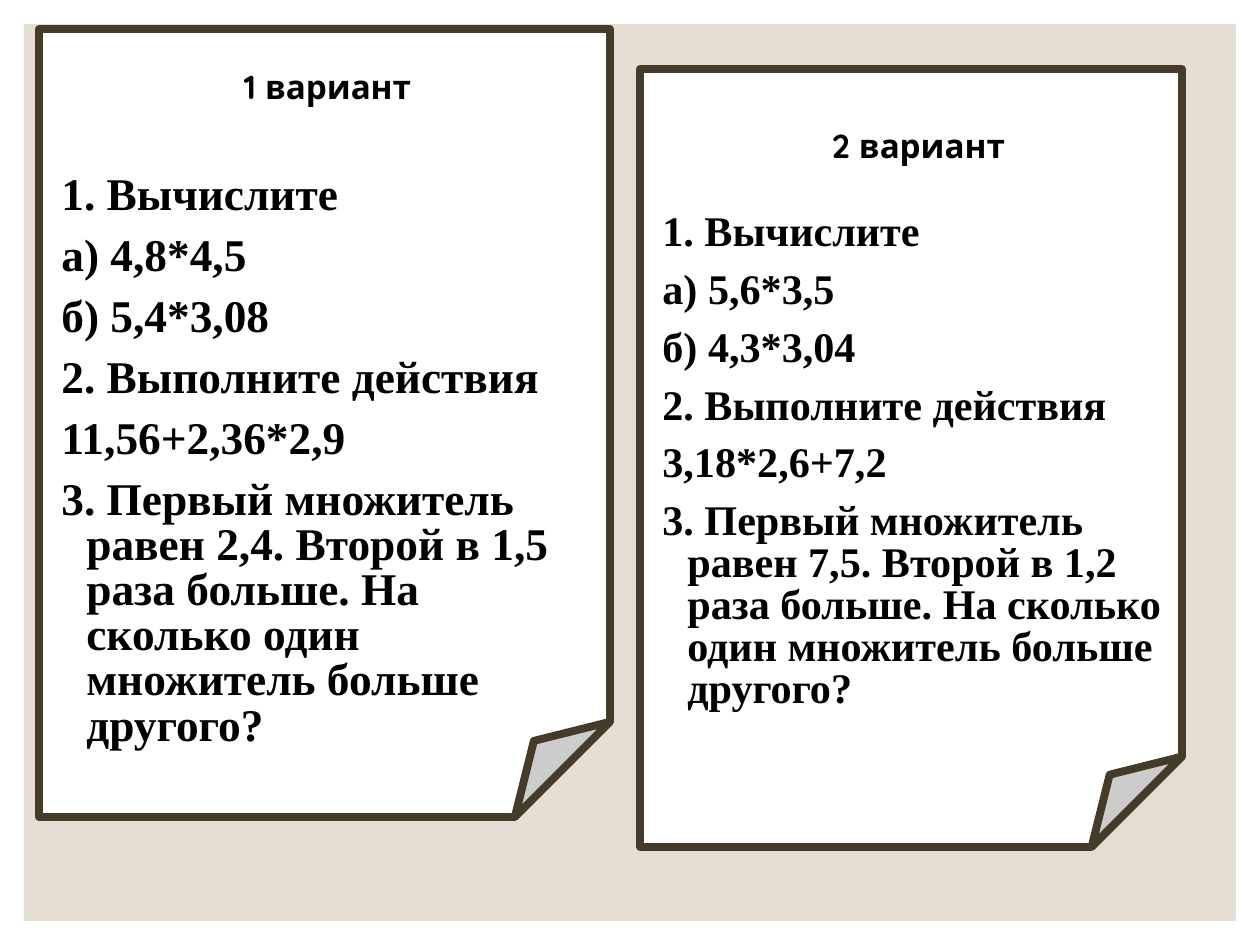
import pptx
import pptx.dml.color
import pptx.enum.shapes
import pptx.enum.text
import pptx.util
import lxml.etree
import pptx.oxml.ns

EMU_PER_PX = 914400 / 126
COLOURS = {"backdrop": "E3DED1", "paper": "FFFFFF", "border": "443C29", "text": "000000"}


def px(length):
    return pptx.util.Emu(round(length * EMU_PER_PX))


def colour(name):
    return pptx.dml.color.RGBColor.from_string(COLOURS[name])


class Worksheet:
    title_font = "Quicksand"
    task_font = "Times New Roman"

    def __init__(self, slide):
        self.slide = slide

    def panel(self, preset, box, fill, border=None):
        panel = self.slide.shapes.add_shape(preset, *map(px, box))
        panel.shadow.inherit = False
        panel.fill.solid()
        panel.fill.fore_color.rgb = colour(fill)
        if border:
            panel.line.color.rgb = colour(border)
            panel.line.width = pptx.util.Pt(4.5)
            lxml.etree.SubElement(panel.line._get_or_add_ln(), pptx.oxml.ns.qn("a:round"))
        else:
            panel.line.fill.background()

    def text_frame(self, box):
        frame = self.slide.shapes.add_textbox(*map(px, box)).text_frame
        frame.word_wrap = True
        return frame

    def style(self, paragraph, font, size):
        paragraph.font.name = font
        paragraph.font.size = pptx.util.Pt(size)
        paragraph.font.bold = True
        paragraph.font.color.rgb = colour("text")

    def title(self, box, wording):
        frame = self.text_frame(box)
        frame.vertical_anchor = pptx.enum.text.MSO_ANCHOR.MIDDLE
        heading = frame.paragraphs[0]
        heading.text = wording
        heading.alignment = pptx.enum.text.PP_ALIGN.CENTER
        self.style(heading, self.title_font, 19)

    def tasks(self, box, lines, size):
        frame = self.text_frame(box)
        for number, line in enumerate(lines):
            task = frame.add_paragraph() if number else frame.paragraphs[0]
            task.text = line
            task.line_spacing = 0.83
            if number:
                task.space_before = pptx.util.Pt(9)
            properties = task._p.get_or_add_pPr()
            properties.set("marL", str(px(25)))
            properties.set("indent", str(-px(25)))
            self.style(task, self.task_font, size)


def task_lines(first, second, expression, factor, ratio):
    return [
        "1. Вычислите",
        f"а) {first}",
        f"б) {second}",
        "2. Выполните действия",
        expression,
        f"3. Первый множитель равен {factor}. Второй в {ratio} раза больше. "
        "На сколько один множитель больше другого?",
    ]


def main():
    deck = pptx.Presentation()
    deck.slide_width, deck.slide_height = px(1260), px(945)
    sheet = Worksheet(deck.slides.add_slide(deck.slide_layouts[6]))
    presets = pptx.enum.shapes.MSO_SHAPE

    sheet.panel(presets.RECTANGLE, (24, 24, 1212, 897), "backdrop")
    for paper in ((640, 69, 542, 778), (39, 29, 571, 788)):
        sheet.panel(presets.FOLDED_CORNER, paper, "paper", "border")

    sheet.title((49, 39, 557, 95), "1 вариант")
    sheet.tasks((49, 168, 557, 601),
                task_lines("4,8*4,5", "5,4*3,08", "11,56+2,36*2,9", "2,4", "1,5"), 25.9)
    sheet.title((640, 98, 557, 95), "2 вариант")
    sheet.tasks((650, 207, 557, 557),
                task_lines("5,6*3,5", "4,3*3,04", "3,18*2,6+7,2", "7,5", "1,2"), 24.1)

    deck.save("out.pptx")


if __name__ == "__main__":
    main()
